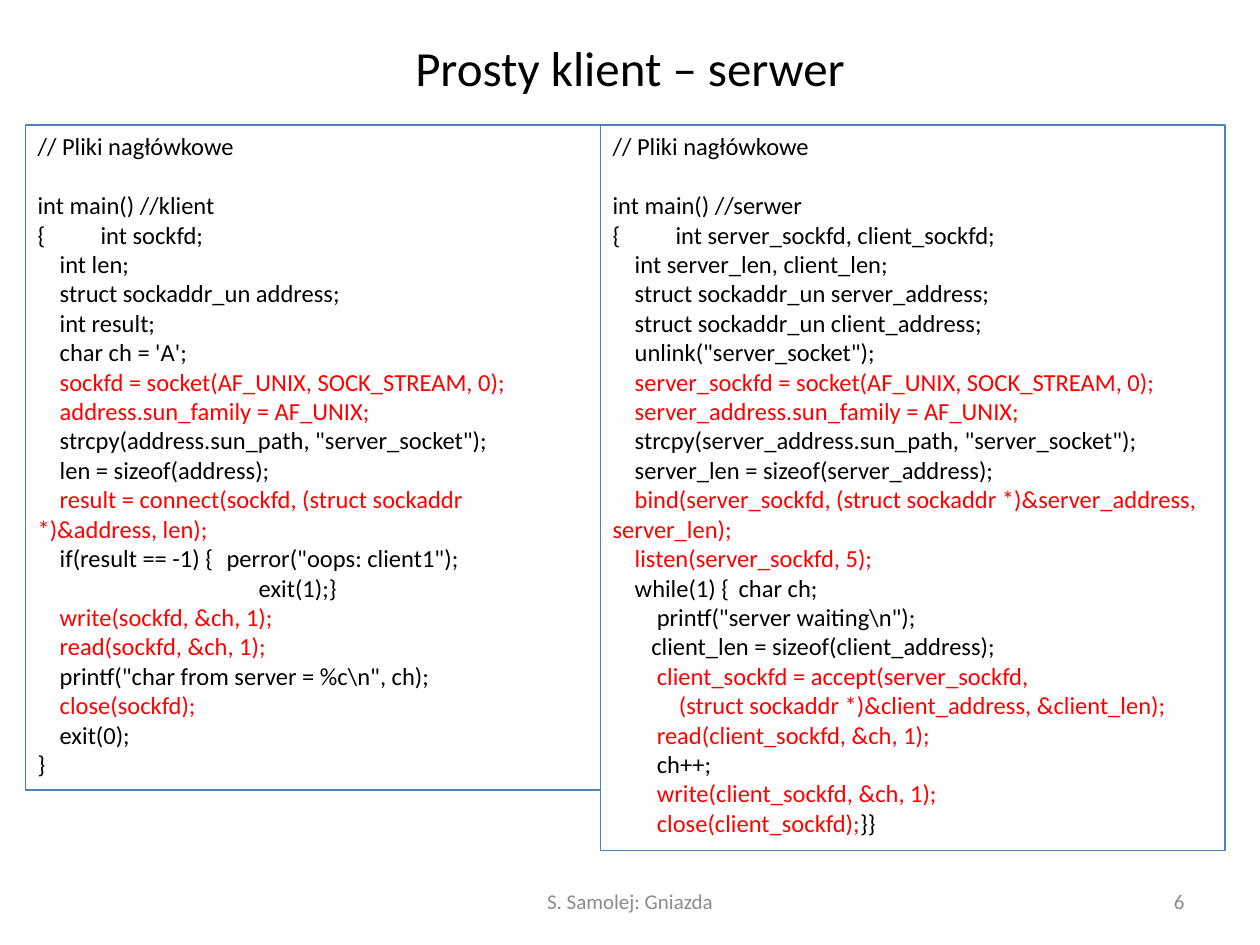
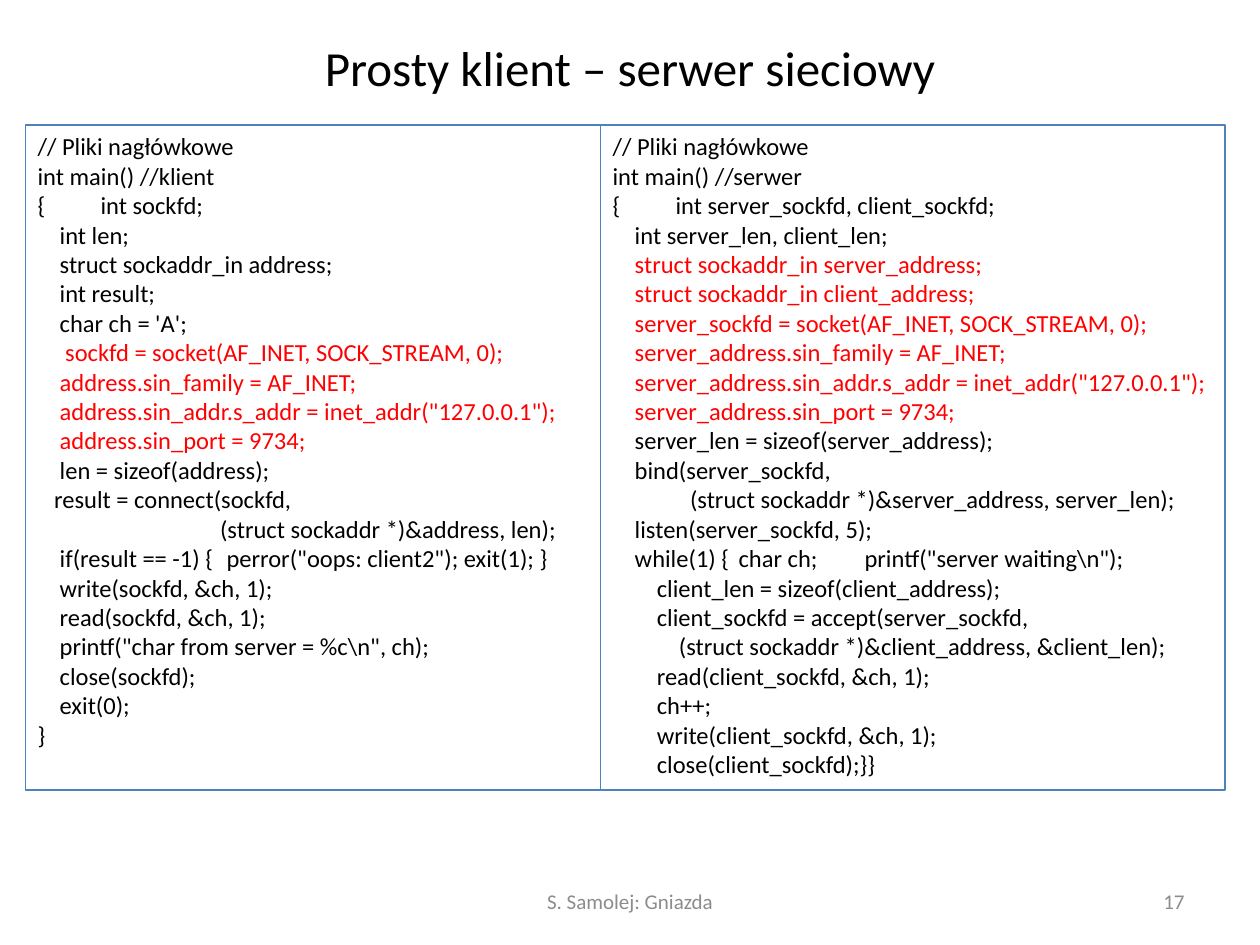
from dataclasses import dataclass
from lxml.etree import SubElement
from pptx import Presentation
from pptx.dml.color import RGBColor
from pptx.enum.shapes import MSO_SHAPE
from pptx.enum.text import MSO_ANCHOR, PP_ALIGN
from pptx.oxml.ns import qn
from pptx.util import Pt


@dataclass(frozen=True)
class Theme:
    font: str = "Calibri"
    ink: str = "000000"
    key: str = "FF0000"
    edge: str = "4F81BD"
    grey: str = "8C8C8C"
    title: float = 28
    code: float = 14
    foot: float = 12
    space: float = 3.16
    blank: float = 16.8


class Deck:
    def __init__(self, theme):
        self.theme = theme
        self.show = Presentation()
        self.show.slide_width, self.show.slide_height = Pt(720), Pt(540)
        self.slide = None

    def style(self, font, size, color):
        font.name = self.theme.font
        font.size = Pt(size)
        font.color.rgb = RGBColor.from_string(color)

    def page(self, title, number):
        self.slide = self.show.slides.add_slide(self.show.slide_layouts[5])
        head = self.slide.shapes.title
        head.left, head.top, head.width, head.height = Pt(36), Pt(21.6), Pt(648), Pt(33)
        self.label(head, title, self.theme.title, self.theme.ink, PP_ALIGN.CENTER)
        self.foot("S. Samolej: Gniazda", 246, 228, PP_ALIGN.CENTER)
        self.foot(number, 516, 168, PP_ALIGN.RIGHT)

    def label(self, shape, text, size, color, align):
        frame = shape.text_frame
        frame.word_wrap = True
        frame.vertical_anchor = MSO_ANCHOR.MIDDLE
        para = frame.paragraphs[0]
        para.text, para.alignment = text, align
        self.style(para.font, size, color)

    def foot(self, text, left, width, align):
        box = self.slide.shapes.add_textbox(Pt(left), Pt(500.5), Pt(width), Pt(28.75))
        self.label(box, text, self.theme.foot, self.theme.grey, align)

    def panel(self, code, left, width, height=380):
        box = self.slide.shapes.add_shape(
            MSO_SHAPE.RECTANGLE, Pt(left), Pt(71.5), Pt(width), Pt(height))
        box.shadow.inherit = False
        box.fill.background()
        box.line.color.rgb = RGBColor.from_string(self.theme.edge)
        box.line.width = Pt(0.75)
        frame = box.text_frame
        frame.word_wrap = True
        frame.vertical_anchor = MSO_ANCHOR.TOP
        para, gap = frame.paragraphs[0], 0
        for line in code.strip().splitlines():
            if not line:
                gap = self.theme.blank
                continue
            if para is None:
                para = frame.add_paragraph()
            self.line(para, line, gap)
            para, gap = None, 0

    def line(self, para, line, gap):
        theme = self.theme
        body = line.lstrip(" ")
        color = theme.key if body.startswith("!") else theme.ink
        first, *parts = body.lstrip("!").split(" @")
        tabs = [part.split(" ", 1) for part in parts]
        para.alignment = PP_ALIGN.LEFT
        para.space_before = Pt(gap)
        props = para._p.get_or_add_pPr()
        props.set("marL", "0")
        props.set("indent", str(Pt((len(line) - len(body)) * theme.space)))
        if tabs:
            stops = SubElement(props, qn("a:tabLst"))
            for place, _ in tabs:
                SubElement(stops, qn("a:tab"), pos=str(Pt(float(place))), algn="l")
        self.style(para.font, theme.code, color)
        main, *tail = "\t".join([first] + [text for _, text in tabs]).split("~")
        para.add_run().text = main
        for text in tail:
            run = para.add_run()
            run.text = text
            self.style(run.font, theme.code, theme.ink)

    def pair(self, client, server, height=380):
        self.panel(client, 14.4, 329)
        self.panel(server, 343, 357, height)


LOCAL_CLIENT = r"""
// Pliki nagłówkowe

int main() //klient
{ @14 int sockfd;
    int len;
    struct sockaddr_un address;
    int result;
    char ch = 'A';
    !sockfd = socket(AF_UNIX, SOCK_STREAM, 0);
    !address.sun_family = AF_UNIX;
    strcpy(address.sun_path, "server_socket");
    len = sizeof(address);
    !result = connect(sockfd, (struct sockaddr *)&address, len);
    if(result == -1) { @126 perror("oops: client1");
                                        exit(1);}
    !write(sockfd, &ch, 1);
    !read(sockfd, &ch, 1);
    printf("char from server = %c\n", ch);
    !close(sockfd);
    exit(0);
}
"""

LOCAL_SETUP = r"""
// Pliki nagłówkowe

int main() //serwer
{ @10.7 int server_sockfd, client_sockfd;
    int server_len, client_len;
    struct sockaddr_un server_address;
    struct sockaddr_un client_address;
    unlink("server_socket");
    !server_sockfd = socket(AF_UNIX, SOCK_STREAM, 0);
    !server_address.sun_family = AF_UNIX;
    strcpy(server_address.sun_path, "server_socket");
    server_len = sizeof(server_address);
    !bind(server_sockfd, (struct sockaddr *)&server_address, server_len);
    !listen(server_sockfd, 5);
"""

LOCAL_LOOP = r"""    while(1) { @73 char ch;
        printf("server waiting\n");
       client_len = sizeof(client_address);
        !client_sockfd = accept(server_sockfd,
            !(struct sockaddr *)&client_address, &client_len);
        !read(client_sockfd, &ch, 1);
        ch++;
        !write(client_sockfd, &ch, 1);
        !close(client_sockfd);~}}
"""

NET_CLIENT = r"""
// Pliki nagłówkowe
int main() //klient
{ @14 int sockfd;
    int len;
    struct sockaddr_in address;
    int result;
    char ch = 'A';
     !sockfd = socket(AF_INET, SOCK_STREAM, 0);
    !address.sin_family = AF_INET;
    !address.sin_addr.s_addr = inet_addr("127.0.0.1");
    !address.sin_port = 9734;
    len = sizeof(address);
   result = connect(sockfd,
                                 (struct sockaddr *)&address, len);
    if(result == -1) { @110 perror("oops: client2"); exit(1); }
    write(sockfd, &ch, 1);
    read(sockfd, &ch, 1);
    printf("char from server = %c\n", ch);
    close(sockfd);
    exit(0);
}
"""

NET_SETUP = r"""
// Pliki nagłówkowe
int main() //serwer
{ @17 int server_sockfd, client_sockfd;
    int server_len, client_len;
    !struct sockaddr_in server_address;
    !struct sockaddr_in client_address;
    !server_sockfd = socket(AF_INET, SOCK_STREAM, 0);
    !server_address.sin_family = AF_INET;
    !server_address.sin_addr.s_addr = inet_addr("127.0.0.1");
    !server_address.sin_port = 9734;
    server_len = sizeof(server_address);
    bind(server_sockfd,
              (struct sockaddr *)&server_address, server_len);
    listen(server_sockfd, 5);
"""

NET_LOOP = r"""    while(1) { @92 char ch; @162.5 printf("server waiting\n");
        client_len = sizeof(client_address);
        client_sockfd = accept(server_sockfd,
            (struct sockaddr *)&client_address, &client_len);
        read(client_sockfd, &ch, 1);
        ch++;
        write(client_sockfd, &ch, 1);
        close(client_sockfd);}}
"""


def main():
    deck = Deck(Theme())
    deck.page("Prosty klient – serwer", "6")
    deck.pair(LOCAL_CLIENT, LOCAL_SETUP + LOCAL_LOOP, 414.5)
    deck.page("Prosty klient – serwer sieciowy", "17")
    deck.pair(NET_CLIENT, NET_SETUP + NET_LOOP)
    deck.show.save("out.pptx")


if __name__ == "__main__":
    main()
